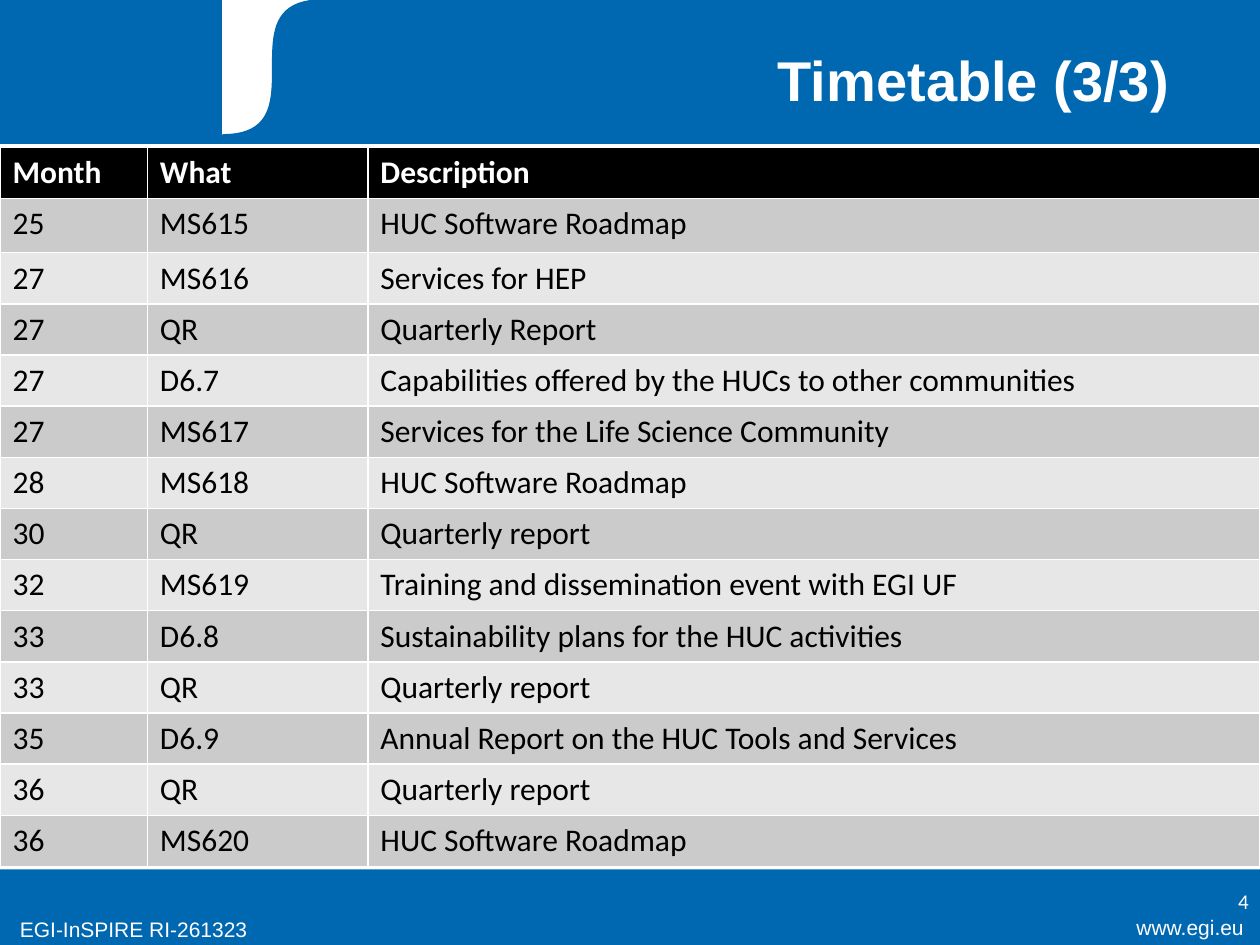
from pptx import Presentation
from pptx.dml.color import RGBColor
from pptx.enum.shapes import MSO_SHAPE
from pptx.enum.text import MSO_ANCHOR, PP_ALIGN
from pptx.util import Inches, Pt

BLUE, WHITE, BLACK = "0067B1", "FFFFFF", "000000"
BANDS = ("CBCBCB", "E7E7E7")

HEADINGS = ("Month", "What", "Description")
MILESTONES = [
    ("25", "MS615", "HUC Software Roadmap"),
    ("27", "MS616", "Services for HEP"),
    ("27", "QR", "Quarterly Report"),
    ("27", "D6.7", "Capabilities offered by the HUCs to other communities"),
    ("27", "MS617", "Services for the Life Science Community"),
    ("28", "MS618", "HUC Software Roadmap"),
    ("30", "QR", "Quarterly report"),
    ("32", "MS619", "Training and dissemination event with EGI UF"),
    ("33", "D6.8", "Sustainability plans for the HUC activities"),
    ("33", "QR", "Quarterly report"),
    ("35", "D6.9", "Annual Report on the HUC Tools and Services"),
    ("36", "QR", "Quarterly report"),
    ("36", "MS620", "HUC Software Roadmap"),
]


def rgb(color):
    return RGBColor.from_string(color)


def paint(shape, color, outlined=True):
    shape.shadow.inherit = False
    shape.fill.solid()
    shape.fill.fore_color.rgb = rgb(color)
    if outlined:
        shape.line.color.rgb = rgb(color)
        shape.line.width = Pt(0.75)
    else:
        shape.line.fill.background()


def add_rectangle(slide, left, top, width, height, color, outlined=True):
    shape = slide.shapes.add_shape(
        MSO_SHAPE.RECTANGLE, Inches(left), Inches(top), Inches(width), Inches(height))
    paint(shape, color, outlined)


def format_text(paragraph, size, font_name, color, bold=False, align=PP_ALIGN.LEFT):
    paragraph.alignment = align
    for run in paragraph.runs:
        run.font.size = Pt(size)
        run.font.name = font_name
        run.font.bold = bold
        run.font.color.rgb = rgb(color)


def add_label(slide, left, top, width, height, text, font_name, align):
    box = slide.shapes.add_textbox(
        Inches(left), Inches(top), Inches(width), Inches(height))
    frame = box.text_frame
    frame.word_wrap = True
    frame.vertical_anchor = MSO_ANCHOR.MIDDLE
    frame.text = text
    format_text(frame.paragraphs[0], 12, font_name, WHITE, align=align)


def add_swoosh(slide, left, top, width, height):
    """White panel, mostly covered by blue with an S-shaped left edge."""
    add_rectangle(slide, left, top, width, height, WHITE)
    reach, steps = 0.4 * width, 40
    curve = []
    for step in range(steps + 1):
        t = step / steps
        x = left + reach * (3 * t * (1 - t) ** 2 + t ** 3)
        y = top + height * ((1 - t) ** 3 + 3 * t * (1 - t) ** 2)
        curve.append((Inches(x), Inches(y)))
    right, bottom = Inches(left + width), Inches(top + height)
    builder = slide.shapes.build_freeform(right, Inches(top))
    builder.add_line_segments([(right, bottom)] + curve, close=True)
    paint(builder.convert_to_shape(), BLUE)


def add_header(slide, width, height):
    add_rectangle(slide, 0, 0, width, height, BLUE)
    add_swoosh(slide, 1.77, 0, 1.97, 1.07)

    # Title, brought in front of the banner
    title = slide.shapes.title
    title.left, title.top = Inches(0.5), Inches(0)
    title.width, title.height = Inches(width - 1), Inches(1.25)
    frame = title.text_frame
    frame.text = "Timetable (3/3)"
    frame.vertical_anchor = MSO_ANCHOR.MIDDLE
    frame.margin_right = Inches(0.22)
    format_text(frame.paragraphs[0], 32, "Arial", WHITE, True, PP_ALIGN.RIGHT)
    title.element.getparent().append(title.element)


def add_footer(slide, top, width, height):
    add_rectangle(slide, 0, top, width, height, BLUE, outlined=False)
    add_label(slide, 8.39, top + 0.3, 1.58, 0.31, "www.egi.eu", "Arial", PP_ALIGN.RIGHT)
    add_label(slide, 0.06, top + 0.32, 2.5, 0.31, "EGI-InSPIRE RI-261323",
              "Arial", PP_ALIGN.LEFT)
    add_label(slide, 7.68, top + 0.05, 2.33, 0.4, "4", "Calibri", PP_ALIGN.RIGHT)


def add_timetable(slide, left, top, width, height):
    rows = [HEADINGS] + MILESTONES
    table = slide.shapes.add_table(
        len(rows), len(HEADINGS),
        Inches(left), Inches(top), Inches(width), Inches(height)).table
    for column, column_width in zip(table.columns, (1.17, 1.75, width - 2.92)):
        column.width = Inches(column_width)

    # The first milestone row is slightly taller than the others
    tall = 0.43
    for index, row in enumerate(table.rows):
        row.height = Inches(tall if index == 1 else (height - tall) / (len(rows) - 1))

    for row_index, values in enumerate(rows):
        heading = row_index == 0
        fill = BLACK if heading else BANDS[(row_index - 1) % 2]
        for column_index, value in enumerate(values):
            cell = table.cell(row_index, column_index)
            cell.fill.solid()
            cell.fill.fore_color.rgb = rgb(fill)
            cell.text_frame.text = value
            format_text(cell.text_frame.paragraphs[0], 18, "Calibri",
                        WHITE if heading else BLACK, bold=heading)


def main():
    presentation = Presentation()
    presentation.slide_width, presentation.slide_height = Inches(10), Inches(7.5)
    slide = presentation.slides.add_slide(presentation.slide_layouts[5])
    add_header(slide, 10, 1.14)
    add_footer(slide, 6.9, 10, 0.6)
    add_timetable(slide, 0, 1.17, 10, 5.71)
    presentation.save("out.pptx")


if __name__ == "__main__":
    main()
